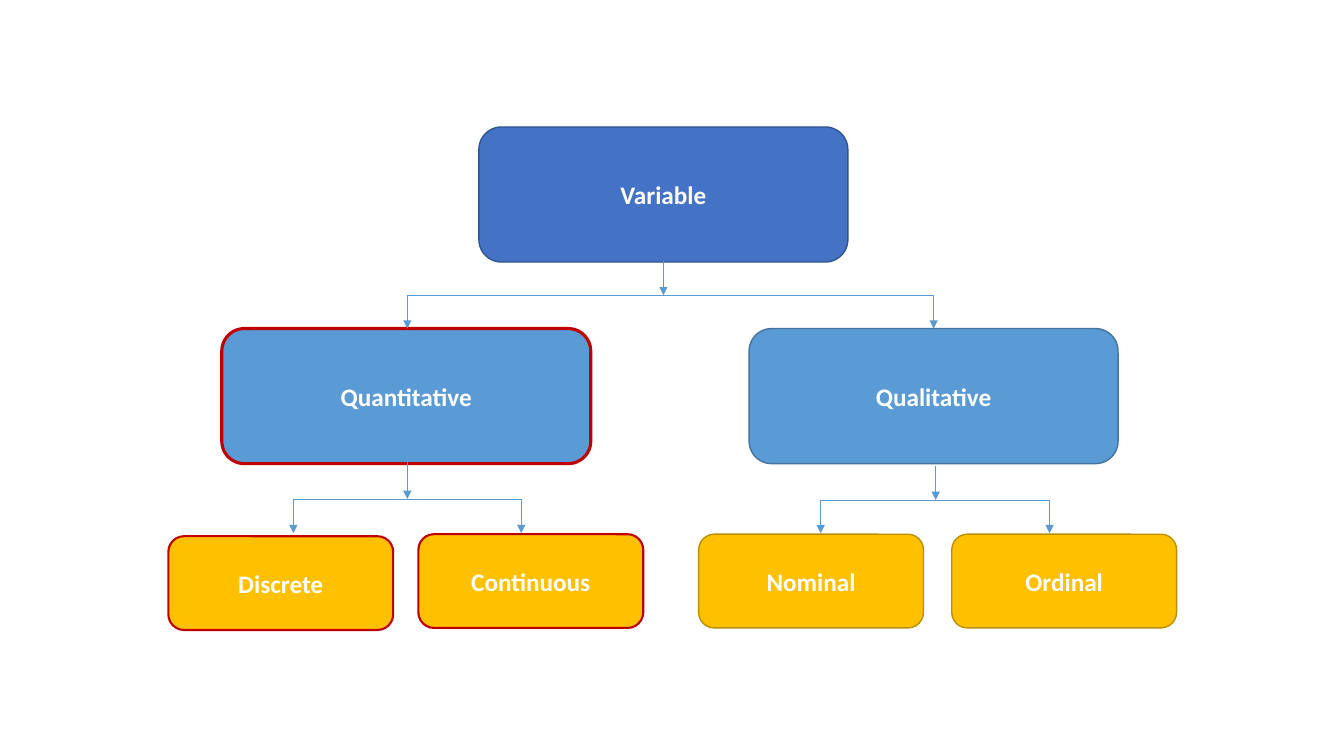
import pptx
import pptx.util
import pptx.dml.color
import pptx.enum.shapes
import pptx.enum.text
import pptx.oxml.ns
import pptx.oxml.xmlchemy

Inches = pptx.util.Inches
Pt = pptx.util.Pt
qn = pptx.oxml.ns.qn
OxmlElement = pptx.oxml.xmlchemy.OxmlElement

COLORS = {
    "root": "4472C4", "root_line": "325491",
    "type": "5B9BD5", "type_line": "43739E",
    "leaf": "FFC000", "leaf_line": "BD8E00",
    "accent": "C00000", "white": "FFFFFF",
}
TYPE_SIZE = (3.66, 1.34)
LEAF_SIZE = (2.23, 0.93)

NODES = [
    ("Variable", 4.75, 1.26, TYPE_SIZE, "root", "root_line", 1),
    ("Qualitative", 7.43, 3.26, TYPE_SIZE, "type", "type_line", 1),
    ("Quantitative", 2.2, 3.26, TYPE_SIZE, "type", "accent", 2.25),
    ("Discrete", 1.67, 5.32, LEAF_SIZE, "leaf", "accent", 1.5),
    ("Continuous", 4.15, 5.3, LEAF_SIZE, "leaf", "accent", 1.5),
    ("Nominal", 6.93, 5.3, LEAF_SIZE, "leaf", "leaf_line", 1),
    ("Ordinal", 9.44, 5.3, LEAF_SIZE, "leaf", "leaf_line", 1),
]

BRANCHES = [
    (4.04, 2.59, 5.22, 0.67, 2.54, 0.34),
    (2.91, 4.58, 2.26, 0.71, 1.13, 0.37),
    (8.14, 4.62, 2.27, 0.67, 1.14, 0.34),
]


def rgb(name):
    return pptx.dml.color.RGBColor.from_string(COLORS[name])


def add_node(slide, text, left, top, size, fill, line, weight):
    sp = slide.shapes.add_shape(
        pptx.enum.shapes.MSO_SHAPE.ROUNDED_RECTANGLE,
        Inches(left), Inches(top), Inches(size[0]), Inches(size[1]))
    sp.shadow.inherit = False
    sp.fill.solid()
    sp.fill.fore_color.rgb = rgb(fill)
    sp.line.color.rgb = rgb(line)
    sp.line.width = Pt(weight)
    tf = sp.text_frame
    tf.word_wrap = True
    tf.vertical_anchor = pptx.enum.text.MSO_ANCHOR.MIDDLE
    p = tf.paragraphs[0]
    p.text = text
    p.alignment = pptx.enum.text.PP_ALIGN.CENTER
    p.font.name = "Calibri"
    p.font.size = Pt(18)
    p.font.bold = True
    p.font.color.rgb = rgb("white")


def add_line(slide, x1, y1, x2, y2, arrow=False):
    cxn = slide.shapes.add_connector(
        pptx.enum.shapes.MSO_CONNECTOR.STRAIGHT,
        Inches(x1), Inches(y1), Inches(x2), Inches(y2))
    cxn.line.color.rgb = rgb("type")
    cxn.line.width = Pt(0.5)
    sp_pr = cxn._element.spPr
    sp_pr.append(OxmlElement("a:effectLst"))
    if arrow:
        tail = OxmlElement("a:tailEnd")
        tail.set("type", "triangle")
        sp_pr.find(qn("a:ln")).append(tail)


def add_branch(slide, left, top, width, height, stem, drop):
    x, bar = left + stem, top + drop
    add_line(slide, x, top, x, bar, arrow=True)
    for end in (left, left + width):
        add_line(slide, x, bar, end, bar)
        add_line(slide, end, bar, end, top + height, arrow=True)


def main():
    prs = pptx.Presentation()
    prs.slide_width = Inches(13.33)
    prs.slide_height = Inches(7.5)
    slide = prs.slides.add_slide(prs.slide_layouts[6])
    for node in NODES:
        add_node(slide, *node)
    for branch in BRANCHES:
        add_branch(slide, *branch)
    prs.save("out.pptx")


if __name__ == "__main__":
    main()
